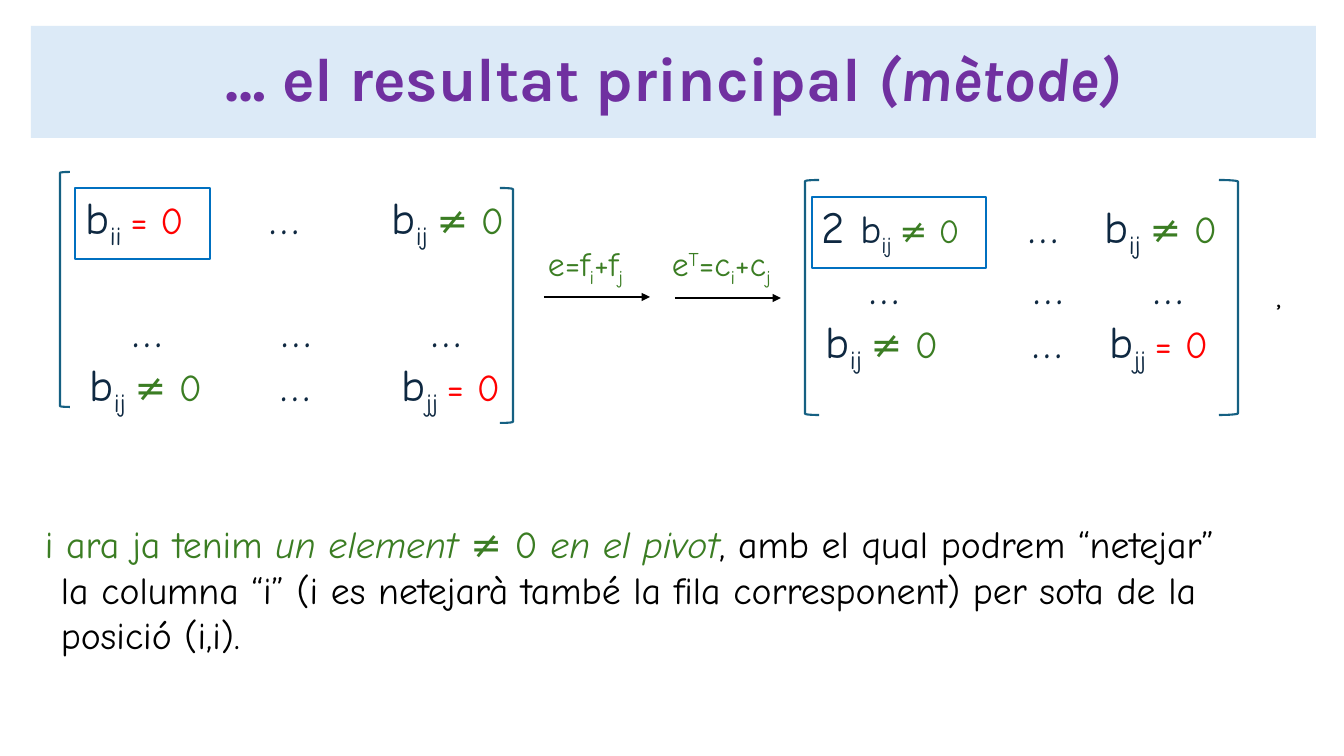
from lxml import etree
from pptx import Presentation
from pptx import util as u
from pptx.dml.color import RGBColor
from pptx.enum import shapes, text
from pptx.oxml.ns import qn

PX = 914400 / 100.8
COLORS = {
    "band": "DCEAF7", "purple": "7030A0", "navy": "0E2841", "red": "FF0000",
    "green": "3B7D23", "blue": "0070C0", "teal": "156082", "black": "000000",
}


def px(*lengths):
    return [u.Emu(round(length * PX)) for length in lengths]


def write_runs(paragraph, runs, font_name="Comic Neue"):
    """Each run is (text, size, color, style); style is a baseline shift or 'italic'."""
    for words, size, color, *style in runs:
        run = paragraph.add_run()
        run.text = words
        run.font.name = font_name
        run.font.size = u.Pt(size)
        run.font.color.rgb = RGBColor.from_string(COLORS[color])
        if style == ["italic"]:
            run.font.italic = True
        elif style:
            run.font._element.set("baseline", str(style[0] * 1000))


presentation = Presentation()
presentation.slide_width, presentation.slide_height = px(1344, 756)
slide = presentation.slides.add_slide(presentation.slide_layouts[6])

# Title band
band = slide.shapes.add_shape(shapes.MSO_SHAPE.RECTANGLE, *px(31, 26, 1285, 112))
band.shadow.inherit = False
band.fill.solid()
band.fill.fore_color.rgb = RGBColor.from_string(COLORS["band"])
band.line.fill.background()
band.text_frame.vertical_anchor = text.MSO_ANCHOR.MIDDLE
title = band.text_frame.paragraphs[0]
title.alignment = text.PP_ALIGN.CENTER
title.line_spacing = 0.9
write_runs(title, [("… el resultat principal ", 44, "purple"),
                   ("(mètode)", 44, "purple", "italic")], "Karla")
for run in title.runs:
    run.font.bold = True

# Matrix entries
b = ("b", 32, "navy")
ij = ("ij ", 32, "navy", -25)
jj = ("jj ", 32, "navy", -25)
nonzero = ("≠ 0", 27, "green")
zero = ("= 0", 27, "red")
dots = ("…", 32, "navy")
tab = ("\t", 32, "navy")
dots_row = [tab, dots, tab, dots, tab, dots]
last_row = [tab, b, ij, nonzero, tab, dots, tab, b, jj, zero]
left_pivot = [b, ("ii ", 32, "navy", -25), zero]
right_pivot = [("2 ", 32, "navy"), ("b", 28, "navy"), ("ij ", 28, "navy", -25),
               ("≠ 0", 24, "green")]

# Matrices: box, pivot entry, tab stops by row, gap under the first row in points
matrices = [
    ((66, 185, 466, 173), left_pivot,
     [(10, 194, 316), (57, 206, 356), (14, 205, 326)], 37),
    ((802, 194, 520, 173), right_pivot,
     [(10, 217, 293), (58, 222, 342), (14, 221, 298)], 0),
]
for box, pivot, row_stops, gap in matrices:
    frame = slide.shapes.add_textbox(*px(*box)).text_frame
    frame.word_wrap = True
    first_row = [tab, *pivot, tab, dots, tab, b, ij, nonzero]
    for index, (row, stops) in enumerate(zip([first_row, dots_row, last_row], row_stops)):
        paragraph = frame.paragraphs[0] if index == 0 else frame.add_paragraph()
        if index == 1:
            paragraph.space_before = u.Pt(gap)
        tab_list = etree.SubElement(paragraph._p.get_or_add_pPr(), qn("a:tabLst"))
        for stop in px(*stops):
            etree.SubElement(tab_list, qn("a:tab"), pos=str(stop), algn="l")
        write_runs(paragraph, row)

# Brackets and pivot frames
left_bracket = shapes.MSO_SHAPE.LEFT_BRACKET
right_bracket = shapes.MSO_SHAPE.RIGHT_BRACKET
rectangle = shapes.MSO_SHAPE.RECTANGLE
outlines = [
    (left_bracket, (60, 172, 10, 235), "teal", 1.5),
    (right_bracket, (500, 188, 13, 235), "teal", 1.5),
    (left_bracket, (805, 180, 14, 235), "teal", 1.5),
    (right_bracket, (1219, 180, 19, 235), "teal", 1.5),
    (rectangle, (75, 188, 135, 71), "blue", 2),
    (rectangle, (812, 197, 174, 71), "blue", 2),
]
for kind, box, color, width in outlines:
    outline = slide.shapes.add_shape(kind, *px(*box))
    outline.shadow.inherit = False
    outline.fill.background()
    outline.line.color.rgb = RGBColor.from_string(COLORS[color])
    outline.line.width = u.Pt(width)

# Arrows with the row and column operations
operations = [
    ((538, 238, 131, 50), (544, 297),
     [("e=f", 0), ("i", -25), ("+f", 0), ("j", -25)]),
    ((662, 238, 149, 50), (675, 298),
     [("e", 0), ("T", 30), ("=c", 0), ("i", -25), ("+c", 0), ("j", -25)]),
]
for box, (x, y), parts in operations:
    label = slide.shapes.add_textbox(*px(*box)).text_frame
    label.word_wrap = True
    write_runs(label.paragraphs[0], [(words, 24, "green", shift) for words, shift in parts])
    arrow = slide.shapes.add_connector(shapes.MSO_CONNECTOR.STRAIGHT, *px(x, y, x + 106, y))
    arrow.line.color.rgb = RGBColor.from_string(COLORS["black"])
    arrow.line.width = u.Pt(2)
    etree.SubElement(arrow.line._get_or_add_ln(), qn("a:tailEnd"), type="triangle")
    etree.SubElement(arrow._element.spPr, qn("a:effectLst"))

# Comma after the second matrix
comma = slide.shapes.add_textbox(*px(1266, 277, 35, 40)).text_frame
write_runs(comma.paragraphs[0], [(",", 18, "black")], "Karla")

# Conclusion
conclusion = slide.shapes.add_textbox(*px(0, 516, 1344, 149)).text_frame
conclusion.word_wrap = True
lines = [
    (35, [("i ara ja tenim ", 27, "green"), ("un element ", 27, "green", "italic"),
          ("≠ 0 ", 27, "green"), ("en el pivot", 27, "green", "italic"),
          (", amb el qual podrem “netejar”", 27, "black")]),
    (51, [("la columna “i” (i es netejarà també la fila corresponent) per sota de la",
           27, "black")]),
    (51, [("posició (i,i).", 27, "black")]),
]
for index, (indent, runs) in enumerate(lines):
    paragraph = conclusion.paragraphs[0] if index == 0 else conclusion.add_paragraph()
    paragraph._p.get_or_add_pPr().set("marL", str(px(indent)[0]))
    write_runs(paragraph, runs)

presentation.save("out.pptx")
